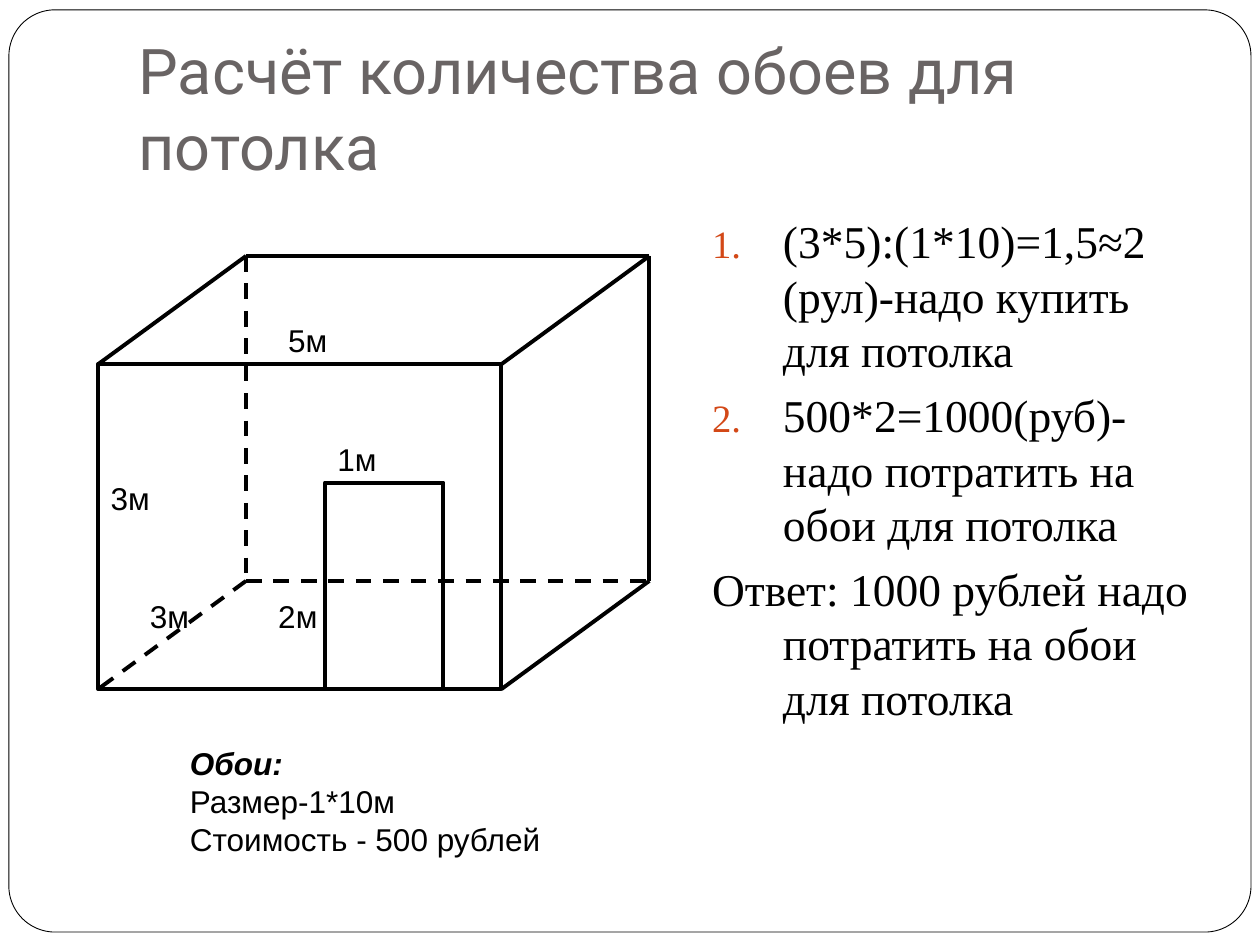
import pptx
import pptx.util
import pptx.dml.color
import pptx.enum.dml
import pptx.enum.shapes
import pptx.enum.text
import pptx.oxml.ns
import lxml.etree

Cm = pptx.util.Cm
Pt = pptx.util.Pt
RGBColor = pptx.dml.color.RGBColor
Shape = pptx.enum.shapes.MSO_SHAPE
Fit = pptx.enum.text.MSO_AUTO_SIZE

BLACK = RGBColor(0, 0, 0)
WHITE = RGBColor(255, 255, 255)
GREY = RGBColor(0x69, 0x64, 0x64)
RUST = RGBColor(0xD3, 0x48, 0x17)


def add_sub(node, tag, **attrs):
    return lxml.etree.SubElement(node, pptx.oxml.ns.qn(tag), attrs)


def style(frame, font, size, color):
    for para in frame.paragraphs:
        for run in para.runs:
            run.font.name = font
            run.font.size = Pt(size)
            run.font.color.rgb = color


deck = pptx.Presentation()
deck.slide_width, deck.slide_height = Cm(25.4), Cm(19.05)
slide = deck.slides.add_slide(deck.slide_layouts[1])

frame = slide.shapes.add_shape(Shape.ROUNDED_RECTANGLE, Cm(0.18), Cm(0.2), Cm(25.04), Cm(18.59))
frame.adjustments[0] = 0.05
frame.shadow.inherit = False
frame.fill.solid()
frame.fill.fore_color.rgb = WHITE
frame.line.color.rgb = BLACK
frame.line.width = Pt(0.5)
slide.shapes.element.insert(2, frame.element)

title = slide.shapes.title
title.left, title.top, title.width, title.height = Cm(2.54), Cm(0.76), Cm(21.59), Cm(3.18)
head = title.text_frame
head.text = "Расчёт количества обоев для потолка"
head.auto_size = Fit.NONE
head.vertical_anchor = pptx.enum.text.MSO_ANCHOR.BOTTOM
head.margin_bottom = Cm(0.25)
head.paragraphs[0].alignment = pptx.enum.text.PP_ALIGN.LEFT
style(head, "Roboto", 36, GREY)

body = slide.placeholders[1]
body.left, body.top, body.width, body.height = Cm(14.1), Cm(4.17), Cm(10.16), Cm(12.95)
steps = body.text_frame
steps.text = "\n".join([
    "(3*5):(1*10)=1,5≈2 (рул)-надо купить для потолка",
    "500*2=1000(руб)-надо потратить на обои для потолка",
    "Ответ: 1000 рублей надо потратить на обои для потолка",
])
steps.auto_size = Fit.NONE
style(steps, "Times New Roman", 26, BLACK)
for rank, para in enumerate(steps.paragraphs):
    para.space_before = Pt(5.8)
    props = para._p.get_or_add_pPr()
    props.set("marL", str(Cm(1.43)))
    props.set("indent", str(-Cm(1.43)))
    if rank < 2:
        add_sub(add_sub(props, "a:buClr"), "a:srgbClr", val=str(RUST))
        add_sub(props, "a:buSzPct", val="85000")
        add_sub(props, "a:buFont", typeface="Times New Roman")
        add_sub(props, "a:buAutoNum", type="arabicPeriod")
    else:
        add_sub(props, "a:buNone")

note = slide.shapes.add_textbox(Cm(3.58), Cm(14.88), Cm(11.91), Cm(2.57)).text_frame
note.word_wrap = True
note.text = "Обои:\nРазмер-1*10м\nСтоимость - 500 рублей"
style(note, "Arial", 18, BLACK)
lead = note.paragraphs[0].runs[0].font
lead.bold = lead.italic = True

room = slide.shapes.add_group_shape().shapes
left, right, top, base = 1.98, 10.11, 7.34, 13.89
deep, rise = 2.98, 2.18
far_left, far_right = left + deep, right + deep
far_top, far_base = top - rise, base - rise

walls = [
    (left, top, right - left, base - top),
    (6.55, 9.73, 2.39, base - 9.73),
]
for wall in walls:
    rect = room.add_shape(Shape.RECTANGLE, *[Cm(size) for size in wall])
    rect.shadow.inherit = False
    rect.fill.background()
    rect.line.color.rgb = BLACK
    rect.line.width = Pt(2.25)

edges = [
    (far_left, far_base, left, base, True),
    (far_left, far_top, left, top, False),
    (far_right, far_top, right, top, False),
    (far_right, far_base, right, base, False),
    (far_left, far_top, far_right, far_top, False),
    (far_right, far_top, far_right, far_base, False),
    (far_left, far_top, far_left, far_base, True),
    (far_left, far_base, far_right, far_base, True),
]
for *ends, dashed in edges:
    edge = room.add_connector(pptx.enum.shapes.MSO_CONNECTOR.STRAIGHT, *[Cm(end) for end in ends])
    edge.line.color.rgb = BLACK
    edge.line.width = Pt(2.25)
    if dashed:
        edge.line.dash_style = pptx.enum.dml.MSO_LINE.DASH
    add_sub(edge._element.spPr, "a:effectLst")

labels = [
    ("3м", 1.98, 9.53),
    ("5м", 5.56, 6.35),
    ("3м", 2.77, 11.91),
    ("1м", 6.55, 8.74),
    ("2м", 5.36, 11.91),
]
for text, x, y in labels:
    label = room.add_textbox(Cm(x), Cm(y), Cm(2.6), Cm(1.02)).text_frame
    label.word_wrap = True
    label.text = text
    style(label, "Arial", 18, BLACK)

deck.save("out.pptx")
